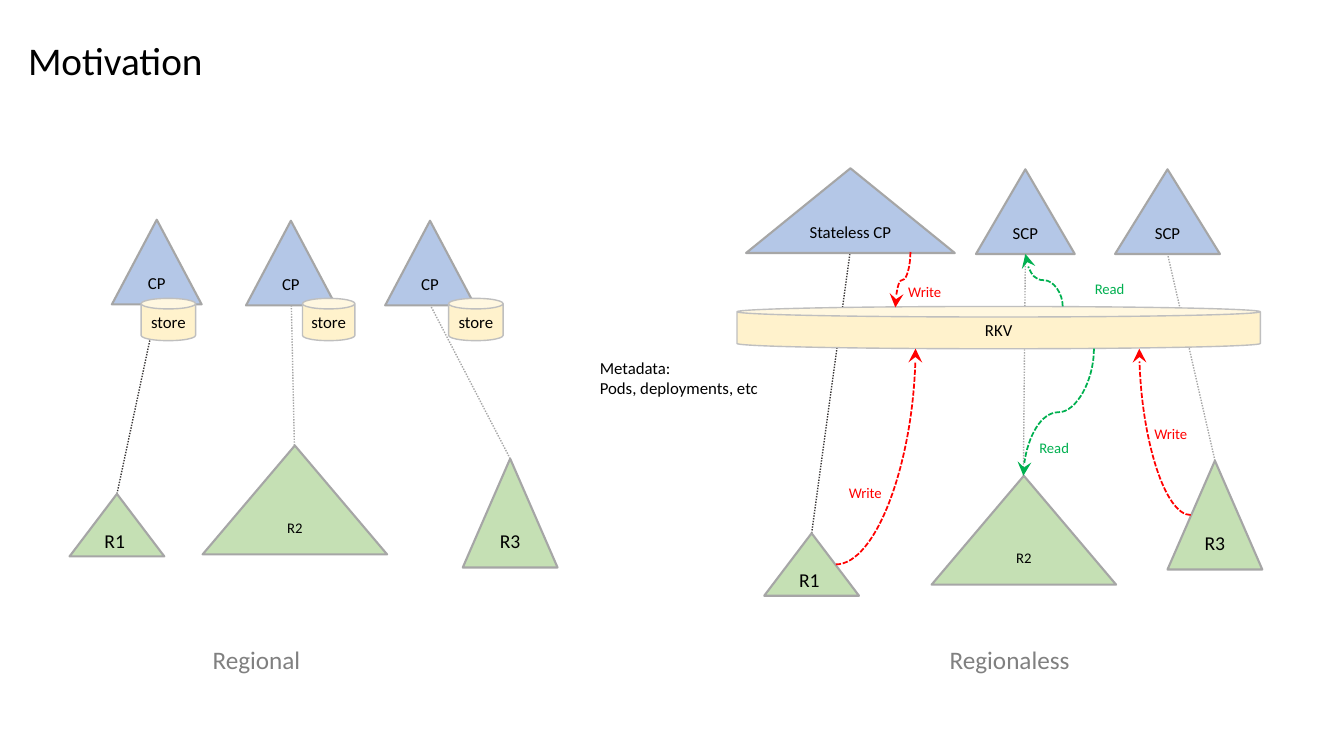
from dataclasses import dataclass
from typing import Any

from lxml import etree
from pptx import Presentation
from pptx.dml.color import RGBColor
from pptx.enum import dml, shapes, text
from pptx.oxml import ns
from pptx.util import Inches, Pt

FONT = "Calibri"
BLACK, RED, GREEN, GREY = "000000", "FF0000", "00B050", "808080"
LIGHT_LINE, DARK_LINE = "A6A6A6", "3B3838"
TRIANGLE = shapes.MSO_SHAPE.ISOSCELES_TRIANGLE
CAN = shapes.MSO_SHAPE.CAN


@dataclass
class Style:
    preset: Any
    fill: str
    line: str
    weight: float


@dataclass
class Node:
    label: str
    left: float
    top: float
    width: float
    height: float
    style: Style
    size: float = 12


@dataclass
class Link:
    start: tuple[float, float]
    end: tuple[float, float]
    color: str = LIGHT_LINE


@dataclass
class Flow:
    start: tuple[float, float]
    end: tuple[float, float]
    color: str
    bends: int


@dataclass
class Label:
    lines: list[str]
    left: float
    top: float
    width: float
    height: float
    size: float
    color: str = BLACK


REGION = Style(TRIANGLE, "C5E0B4", "A6A6A6", 1.5)
CONTROL = Style(TRIANGLE, "B4C7E7", "A6A6A6", 1.5)
STORE = Style(CAN, "FFF2CC", "BFBFBF", 1)

LINKS = [
    Link((2.92, 4.42), (2.89, 3.03)),
    Link((1.16, 4.9), (1.56, 3.03), DARK_LINE),
    Link((5.06, 4.55), (4.27, 3.03)),
    Link((10.15, 4.72), (10.17, 2.52)),
    Link((8.05, 5.29), (8.43, 2.51), DARK_LINE),
    Link((12.05, 4.57), (11.58, 2.52)),
]

NODES = [
    Node("R1 ", 0.69, 4.9, 0.94, 0.62, REGION, 14),
    Node("R3", 4.59, 4.55, 0.94, 1.08, REGION, 14),
    Node("R2", 2.01, 4.42, 1.83, 1.08, REGION, 10.5),
    Node("CP", 1.11, 2.18, 0.89, 0.84, CONTROL),
    Node("CP", 2.44, 2.19, 0.89, 0.84, CONTROL),
    Node("CP", 3.82, 2.19, 0.89, 0.84, CONTROL),
    Node("store", 1.4, 2.96, 0.54, 0.42, STORE),
    Node("store", 3, 2.96, 0.52, 0.42, STORE),
    Node("store", 4.45, 2.96, 0.54, 0.42, STORE),
    Node("R1 ", 7.58, 5.29, 0.94, 0.62, REGION, 14),
    Node("R3", 11.58, 4.57, 0.94, 1.08, REGION, 14),
    Node("R2", 9.24, 4.72, 1.83, 1.08, REGION, 10.5),
    Node("RKV", 7.31, 3.04, 5.19, 0.42, STORE),
    Node("Stateless CP", 7.4, 1.67, 2.07, 0.84, CONTROL),
    Node("SCP", 9.68, 1.68, 0.98, 0.84, CONTROL),
    Node("SCP", 11.06, 1.68, 1.04, 0.84, CONTROL),
]

FLOWS = [
    Flow((10.85, 3.46), (10.15, 4.72), GREEN, 2),
    Flow((8.29, 5.6), (9.08, 3.46), RED, 1),
    Flow((11.81, 5.11), (11.3, 3.46), RED, 1),
    Flow((9.03, 2.5), (8.88, 3.05), RED, 2),
    Flow((10.54, 3.04), (10.17, 2.52), GREEN, 2),
]

LABELS = [
    Label(["Write"], 8.91, 2.76, 0.56, 0.29, 10.5, RED),
    Label(["Write"], 11.35, 4.17, 0.56, 0.29, 10.5, RED),
    Label(["Write"], 8.32, 4.75, 0.56, 0.29, 10.5, RED),
    Label(["Read"], 10.21, 4.3, 0.52, 0.29, 10.5, GREEN),
    Label(["Read"], 10.76, 2.73, 0.52, 0.29, 10.5, GREEN),
    Label(["Regional"], 2.01, 6.34, 1.08, 0.4, 18, GREY),
    Label(["Regionaless"], 9.32, 6.34, 1.41, 0.4, 18, GREY),
    Label(["Motivation"], 0.18, 0.31, 1.96, 0.57, 28),
    Label(["Metadata:", "Pods, deployments, etc"], 5.85, 3.5, 1.79, 0.5, 12),
]


def rgb(value: str) -> RGBColor:
    return RGBColor.from_string(value)


def apply(target: Any, values: dict[str, Any]) -> None:
    for name, value in values.items():
        setattr(target, name, value)


def write(para: Any, words: str, size: float, color: str) -> None:
    span = para.add_run()
    span.text = words
    apply(span.font, {"name": FONT, "size": Pt(size)})
    span.font.color.rgb = rgb(color)


def add_line(page: Any, kind: Any, start: tuple[float, float],
             end: tuple[float, float], color: str, weight: float, dash: Any) -> Any:
    points = [Inches(value) for value in (*start, *end)]
    line = page.shapes.add_connector(kind, *points)
    line.line.color.rgb = rgb(color)
    apply(line.line, {"width": Pt(weight), "dash_style": dash})
    etree.SubElement(line._element.spPr, ns.qn("a:effectLst"))
    return line


def draw_link(page: Any, link: Link) -> None:
    add_line(page, shapes.MSO_CONNECTOR.STRAIGHT, link.start, link.end,
             link.color, 1, dml.MSO_LINE.ROUND_DOT)


def draw_flow(page: Any, flow: Flow) -> None:
    start, end, turn = flow.start, flow.end, 0
    if flow.bends == 2:
        across, down = end[0] - start[0], end[1] - start[1]
        middle = (start[0] + end[0]) / 2, (start[1] + end[1]) / 2
        reach = abs(down) / 2
        rise = (-across if down > 0 else across) / 2
        start = middle[0] - reach, middle[1] - rise
        end = middle[0] + reach, middle[1] + rise
        turn = 90 if down > 0 else 270
    curve = add_line(page, shapes.MSO_CONNECTOR.CURVE, start, end,
                     flow.color, 1.25, dml.MSO_LINE.SQUARE_DOT)
    frame = curve._element.spPr
    frame.find(ns.qn("a:xfrm")).set("rot", str(turn * 60000))
    frame.find(ns.qn("a:prstGeom")).set("prst", f"curvedConnector{flow.bends + 1}")
    outline = frame.find(ns.qn("a:ln"))
    outline.find(ns.qn("a:prstDash")).set("val", "sysDash")
    etree.SubElement(outline, ns.qn("a:tailEnd"), type="stealth", w="lg", len="lg")


def draw_node(page: Any, node: Node) -> None:
    bounds = [Inches(value) for value in (node.left, node.top, node.width, node.height)]
    shape = page.shapes.add_shape(node.style.preset, *bounds)
    shape.shadow.inherit = False
    shape.fill.solid()
    shape.fill.fore_color.rgb = rgb(node.style.fill)
    shape.line.color.rgb = rgb(node.style.line)
    shape.line.width = Pt(node.style.weight)
    frame = shape.text_frame
    apply(frame, {"vertical_anchor": text.MSO_ANCHOR.MIDDLE,
                  "word_wrap": node.style.preset != CAN})
    para = frame.paragraphs[0]
    para.alignment = text.PP_ALIGN.CENTER
    write(para, node.label, node.size, BLACK)


def draw_label(page: Any, label: Label) -> None:
    bounds = [Inches(value) for value in (label.left, label.top, label.width, label.height)]
    box = page.shapes.add_textbox(*bounds)
    frame = box.text_frame
    apply(frame, {"word_wrap": False, "auto_size": text.MSO_AUTO_SIZE.SHAPE_TO_FIT_TEXT})
    for index, words in enumerate(label.lines):
        para = frame.add_paragraph() if index else frame.paragraphs[0]
        write(para, words, label.size, label.color)


def main() -> None:
    deck = Presentation()
    apply(deck, {"slide_width": Inches(13.33), "slide_height": Inches(7.5)})
    page = deck.slides.add_slide(deck.slide_layouts[6])
    for draw, items in ((draw_link, LINKS), (draw_node, NODES),
                        (draw_flow, FLOWS), (draw_label, LABELS)):
        for item in items:
            draw(page, item)
    deck.save("out.pptx")


if __name__ == "__main__":
    main()
